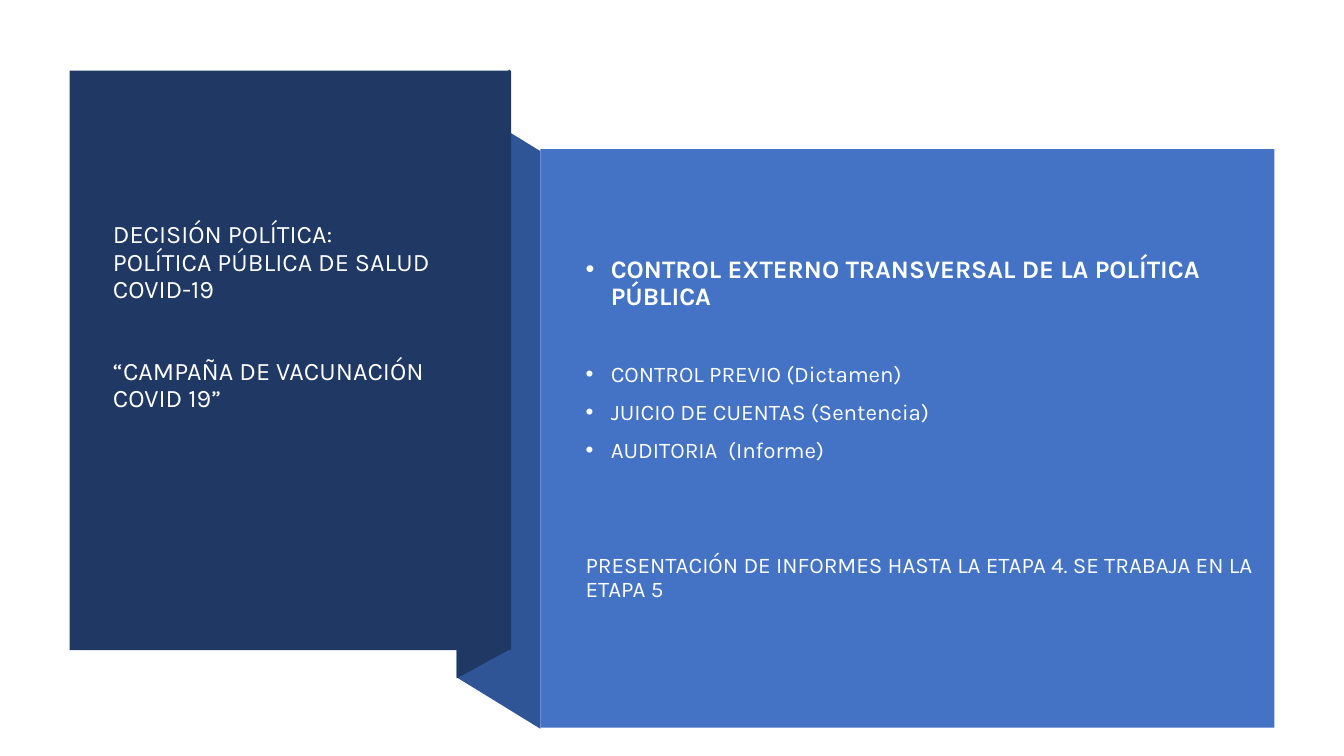
from pptx import Presentation
from pptx import util as u
from pptx.dml import color
from pptx.enum import shapes, text
from pptx.oxml import ns
from lxml import etree

FONT = "Karla"
NAVY, MID_BLUE, BLUE = "203864", "2F5597", "4472C4"
WHITE, SOFT_WHITE = "FFFFFF", "FEFFFF"


def rgb(value):
    """Turn a hex string into a colour."""
    return color.RGBColor.from_string(value)


def write(frame, content, size=16, ink=WHITE, bold=False, before=0, bullet=False, first=False):
    """Write one formatted paragraph into a text frame."""
    paragraph = frame.paragraphs[0] if first else frame.add_paragraph()
    paragraph.alignment = text.PP_ALIGN.LEFT
    paragraph.line_spacing = 0.9
    paragraph.space_before = u.Pt(before)
    run = paragraph.add_run()
    run.text = content
    run.font.name = FONT
    run.font.size = u.Pt(size)
    run.font.bold = bold
    run.font.color.rgb = rgb(ink)
    if bullet:
        properties = paragraph._p.get_or_add_pPr()
        properties.set("marL", str(u.Inches(0.25)))
        properties.set("indent", str(u.Inches(-0.25)))
        etree.SubElement(properties, ns.qn("a:buFont")).set("typeface", "Arial")
        etree.SubElement(properties, ns.qn("a:buChar")).set("char", "•")


class RibbonSlide:
    """Hold the slide and draw its panels, folds and text."""

    def __init__(self, presentation):
        self.slide = presentation.slides.add_slide(presentation.slide_layouts[5])

    def paint(self, shape, fill):
        """Give a shape a flat fill without outline or shadow."""
        shape.shadow.inherit = False
        shape.fill.solid()
        shape.fill.fore_color.rgb = rgb(fill)
        shape.line.fill.background()

    def panel(self, left, top, width, height, fill):
        """Draw a rectangular panel."""
        box = [u.Inches(value) for value in (left, top, width, height)]
        self.paint(self.slide.shapes.add_shape(shapes.MSO_SHAPE.RECTANGLE, *box), fill)

    def fold(self, points, fill):
        """Draw a folded side of the ribbon."""
        corners = [(u.Inches(x), u.Inches(y)) for x, y in points]
        builder = self.slide.shapes.build_freeform(*corners[0])
        builder.add_line_segments(corners[1:], close=True)
        self.paint(builder.convert_to_shape(), fill)

    def frame(self, shape, left, top, width, height, bottom=0.05):
        """Place a text shape and set up its frame."""
        shape.left, shape.top = u.Inches(left), u.Inches(top)
        shape.width, shape.height = u.Inches(width), u.Inches(height)
        frame = shape.text_frame
        frame.word_wrap = True
        frame.auto_size = text.MSO_AUTO_SIZE.NONE
        frame.vertical_anchor = text.MSO_ANCHOR.MIDDLE
        frame.margin_bottom = u.Inches(bottom)
        return frame

    def title(self, lines, *box, bottom):
        """Fill the title placeholder and bring it to the front."""
        shape = self.slide.shapes.title
        shape.element.getparent().append(shape.element)
        frame = self.frame(shape, *box, bottom=bottom)
        for index, (content, before) in enumerate(lines):
            write(frame, content, size=18, before=before, first=index == 0)

    def body(self, items, *box):
        """Add the text box with the list of controls."""
        frame = self.frame(self.slide.shapes.add_textbox(0, 0, 0, 0), *box)
        for index, (content, style) in enumerate(items):
            write(frame, content, ink=SOFT_WHITE, first=index == 0, **style)


def main():
    """Build the slide and save it."""
    presentation = Presentation()
    presentation.slide_width, presentation.slide_height = u.Inches(13.33), u.Inches(7.5)
    ribbon = RibbonSlide(presentation)
    ribbon.fold([(5.36, 7.23), (4.53, 6.72), (4.53, 0.99), (5.36, 1.5)], MID_BLUE)
    ribbon.fold([(5.06, 6.44), (4.53, 6.73), (4.53, 0.98), (5.06, 0.69)], NAVY)
    ribbon.panel(0.69, 0.7, 4.38, 5.75, NAVY)
    ribbon.title([
        ("DECISIÓN POLÍTICA:", 0),
        ("POLÍTICA PÚBLICA DE SALUD", 0),
        ("COVID-19", 0),
        ("“CAMPAÑA DE VACUNACIÓN COVID 19”", 39),
    ], 1.02, 1.07, 3.71, 4.99, bottom=0.88)
    ribbon.panel(5.36, 1.48, 7.28, 5.74, BLUE)
    ribbon.body([
        ("CONTROL EXTERNO TRANSVERSAL DE LA POLÍTICA PÚBLICA",
         dict(size=18, bold=True, before=10, bullet=True)),
        ("CONTROL PREVIO (Dictamen)", dict(before=37, bullet=True)),
        ("JUICIO DE CUENTAS (Sentencia)", dict(before=10, bullet=True)),
        ("AUDITORIA  (Informe)", dict(before=10, bullet=True)),
        ("PRESENTACIÓN DE INFORMES HASTA LA ETAPA 4. SE TRABAJA EN LA ETAPA 5", dict(before=64.5)),
    ], 5.71, 1.9, 6.83, 4.72)
    presentation.save("out.pptx")


if __name__ == "__main__":
    main()
